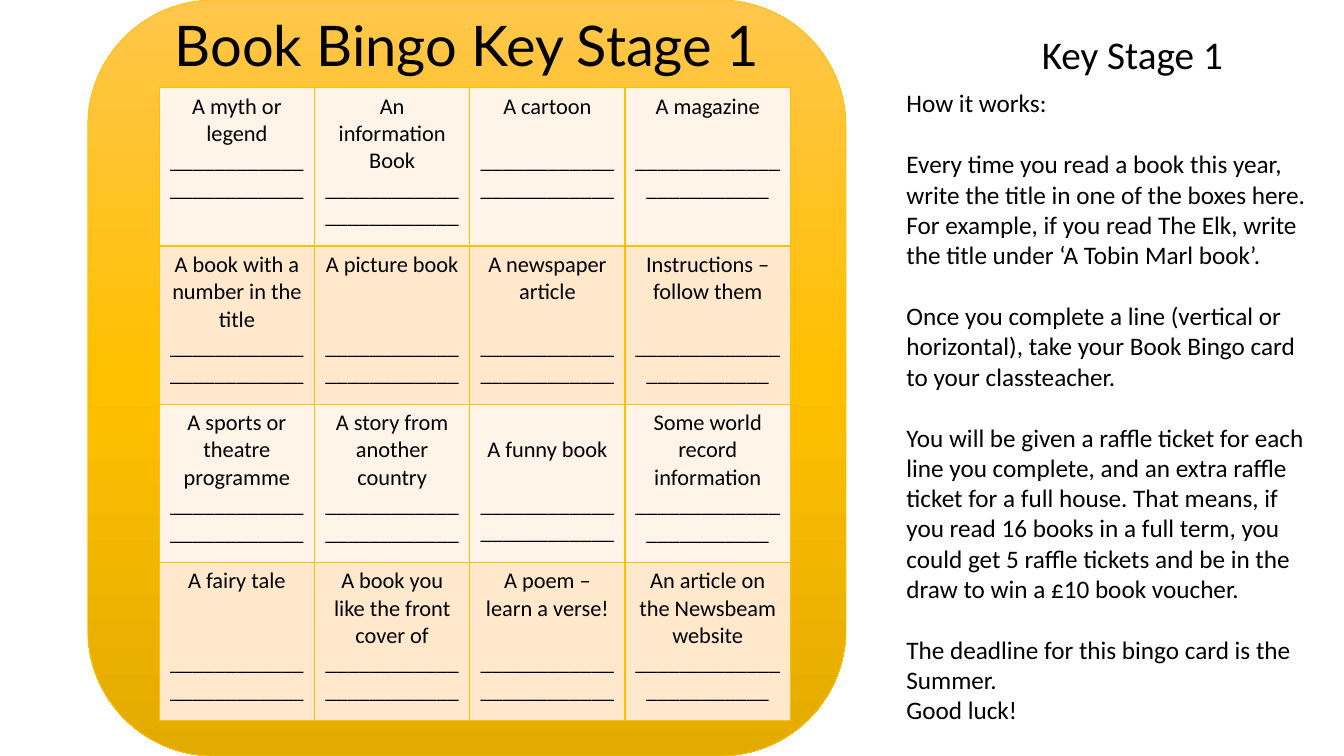
from copy import deepcopy
from lxml.etree import SubElement
from pptx import Presentation
from pptx.dml.color import RGBColor
from pptx.enum.shapes import MSO_SHAPE
from pptx.enum.text import MSO_ANCHOR, MSO_AUTO_SIZE, PP_ALIGN
from pptx.oxml.ns import qn
from pptx.util import Inches, Pt

COLORS = {"text": "000000", "gold": "FFC000", "light": "FFC64B", "dark": "E3AB00",
          "odd": "FFF4E7", "even": "FFE8CC"}
LINE = 1.22
RULE = "_" * 24

BOXES = [
    [("A myth or legend", 0), ("An information Book", 0),
     ("A cartoon", 1), ("A magazine", 1)],
    [("A book with a number in the title", 0), ("A picture book", 2),
     ("A newspaper article", 1), ("Instructions – follow them", 1)],
    [("A sports or theatre programme", 0), ("A story from another country", 0),
     ("A funny book", 1), ("Some world record information", 0)],
    [("A fairy tale", 2), ("A book you like the front cover of", 0),
     ("A poem – learn a verse!", 1), ("An article on the Newsbeam website", 0)],
]
LOWERED = "A funny book"

RULES = [
    ("How it works:", 0),
    ("Every time you read a book this year, write the title in one of the boxes here. "
     "For example, if you read The Elk, write the title under ‘A Tobin Marl book’.", 1),
    ("Once you complete a line (vertical or horizontal), take your Book Bingo card "
     "to your classteacher.", 1),
    ("You will be given a raffle ticket for each line you complete, and an extra raffle "
     "ticket for a full house. That means, if you read 16 books in a full term, you could "
     "get 5 raffle tickets and be in the draw to win a £10 book voucher.", 1),
    ("The deadline for this bingo card is the Summer.", 1),
    ("Good luck!", 0),
]


def color(name):
    return RGBColor.from_string(COLORS[name])


def place(shape, left, top, width, height):
    shape.left, shape.top = Inches(left), Inches(top)
    shape.width, shape.height = Inches(width), Inches(height)


def write(frame, lines, size, font="Calibri", align=PP_ALIGN.CENTER, wrap=True):
    frame.word_wrap = wrap
    frame.auto_size = MSO_AUTO_SIZE.NONE
    frame.vertical_anchor = MSO_ANCHOR.TOP
    fill(frame, lines, size, font, align)


def fill(frame, lines, size, font="Calibri", align=PP_ALIGN.CENTER):
    for i, (text, gap) in enumerate(lines):
        para = frame.paragraphs[0] if i == 0 else frame.add_paragraph()
        para.alignment = align
        para.line_spacing = 1.0
        para.space_before = Pt(gap * size * LINE)
        para.space_after = Pt(0)
        run = para.add_run()
        run.text = text
        run.font.size = Pt(size)
        run.font.name = font
        run.font.color.rgb = color("text")


def border(cell):
    props = cell._tc.get_or_add_tcPr()
    for side in ("a:lnL", "a:lnR", "a:lnT", "a:lnB"):
        line = SubElement(props, qn(side), w=str(Pt(1)))
        paint = SubElement(line, qn("a:solidFill"))
        SubElement(paint, qn("a:srgbClr"), val=COLORS["gold"])


def draw_card(slide, left, top, width, height):
    card = slide.shapes.add_shape(MSO_SHAPE.ROUNDED_RECTANGLE, Inches(left), Inches(top),
                                  Inches(width), Inches(height))
    card.shadow.inherit = False
    card.line.color.rgb = color("gold")
    card.line.width = Pt(0.5)
    card.fill.gradient()
    card.fill.gradient_angle = 270
    stops = card.element.xpath(".//a:gsLst")[0]
    stops.insert(1, deepcopy(stops[0]))
    for stop, name, pos in zip(card.fill.gradient_stops, ("light", "gold", "dark"), (0, 0.5, 1)):
        stop.color.rgb = color(name)
        stop.position = pos
    slide.shapes._spTree.insert(2, card.element)
    title = slide.shapes.title
    place(title, left + 0.71, top + 0.05, 6.1, 0.77)
    write(title.text_frame, [("Book Bingo Key Stage 1", 0)], 40, font="Lato", wrap=False)
    draw_grid(slide, left + 0.71, top + 0.87, 6.26, 6.28)


def draw_grid(slide, left, top, width, height):
    count = len(BOXES)
    table = slide.shapes.add_table(count, count, Inches(left), Inches(top),
                                   Inches(width), Inches(height)).table
    table.first_row = table.horz_banding = False
    for i, col in enumerate(table.columns):
        col.width = Inches(1.64 if i == count - 1 else (width - 1.64) / (count - 1))
    for r, row in enumerate(BOXES):
        table.rows[r].height = Inches(height / count)
        for c, (label, gap) in enumerate(row):
            cell = table.cell(r, c)
            border(cell)
            cell.fill.solid()
            cell.fill.fore_color.rgb = color("even" if r % 2 else "odd")
            if label == LOWERED:
                cell.margin_top = Inches(0.32)
            fill(cell.text_frame, [(label, 0), (RULE, gap)], 16)


def draw_guide(slide, left, top, width, height):
    head = slide.shapes.add_textbox(0, 0, 0, 0)
    place(head, left + 1.33, top, 2.02, 0.57)
    write(head.text_frame, [("Key Stage 1", 0)], 28, wrap=False)
    body = slide.placeholders[1]
    place(body, left, top + 0.57, width, height - 0.57)
    write(body.text_frame, RULES, 18, align=PP_ALIGN.LEFT)
    for para in body.text_frame.paragraphs:
        props = para._p.get_or_add_pPr()
        props.set("marL", "0")
        props.set("indent", "0")
        SubElement(props, qn("a:buNone"))


def main():
    deck = Presentation()
    deck.slide_width, deck.slide_height = Inches(13.33), Inches(7.5)
    slide = deck.slides.add_slide(deck.slide_layouts[1])
    draw_card(slide, 0.87, 0, 7.52, 7.5)
    draw_guide(slide, 8.89, 0.25, 4.2, 7.03)
    deck.save("out.pptx")


if __name__ == "__main__":
    main()
